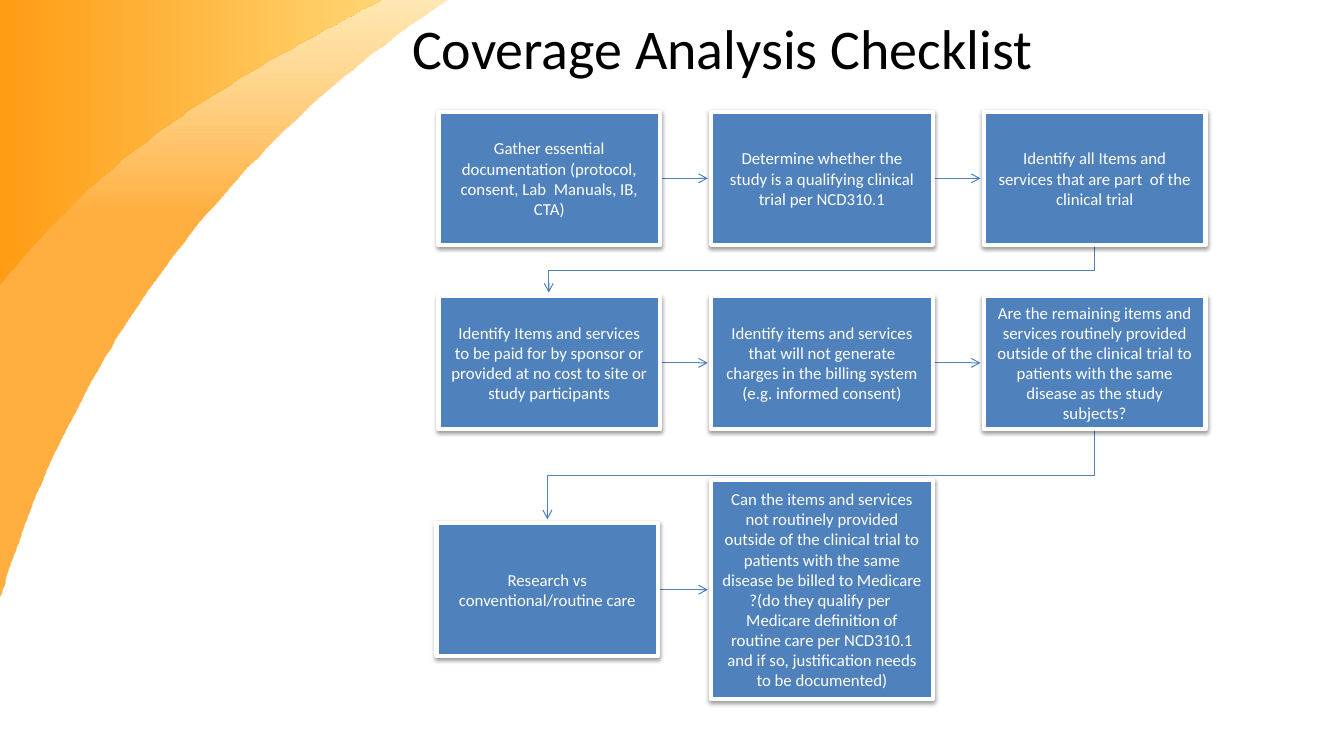
from lxml.etree import SubElement
from pptx import Presentation
from pptx.dml.color import RGBColor
from pptx.enum.shapes import MSO_CONNECTOR, MSO_SHAPE
from pptx.enum.text import MSO_ANCHOR, PP_ALIGN
from pptx.oxml.ns import qn
from pptx.util import Pt

BOX_W, BOX_H = 158.4, 95
COLUMNS = [313.2 + 194.8 * i for i in range(3)]
ROWS = [79.9, 211.7]
ARROW_GAP = 2.4

STEPS = [
    ["Gather essential documentation (protocol, consent, Lab  Manuals, IB, CTA)",
     "Determine whether the study is a qualifying clinical trial per NCD310.1",
     "Identify all Items and services that are part  of the clinical trial"],
    ["Identify Items and services to be paid for by sponsor or provided at no cost "
     "to site or study participants",
     "Identify items and services that will not generate charges in the billing "
     "system (e.g. informed consent)",
     "Are the remaining items and services routinely provided outside of the "
     "clinical trial to patients with the same disease as the study subjects?"],
]
CARE_TYPE = "Research vs conventional/routine care"
BILLING = ("Can the items and services not routinely provided outside of the clinical "
           "trial to patients with the same disease be billed to Medicare ?(do they "
           "qualify per  Medicare definition of routine care per NCD310.1 and if so, "
           "justification needs to be documented)")


def color(hex_text):
    return RGBColor.from_string(hex_text)


def bezier(start, control1, control2, end, steps=60):
    """Return points along a cubic curve, without its start."""
    points = []
    for i in range(1, steps + 1):
        t = i / steps
        u = 1 - t
        weights = (u ** 3, 3 * u * u * t, 3 * u * t * t, t ** 3)
        points.append(tuple(sum(w * p[axis] for w, p in
                                zip(weights, (start, control1, control2, end)))
                            for axis in (0, 1)))
    return points


class FlowSlide:
    font = "Calibri"
    blue, white, black = "4F81BD", "FFFFFF", "000000"

    def __init__(self, slide):
        self.shapes = slide.shapes

    def style_text(self, frame, text, size, hex_text, align, anchor):
        frame.word_wrap = True
        frame.vertical_anchor = anchor
        frame.text = text
        paragraph = frame.paragraphs[0]
        paragraph.alignment = align
        font = paragraph.runs[0].font
        font.name, font.size = self.font, Pt(size)
        font.color.rgb = color(hex_text)

    def title(self, text, left, top, width, height):
        frame = self.shapes.add_textbox(Pt(left), Pt(top), Pt(width), Pt(height)).text_frame
        self.style_text(frame, text, 40, self.black, PP_ALIGN.LEFT, MSO_ANCHOR.BOTTOM)

    def outline(self, points, close):
        builder = self.shapes.build_freeform(*points[0], scale=Pt(1))
        builder.add_line_segments(points[1:], close=close)
        shape = builder.convert_to_shape()
        shape.shadow.inherit = False
        return shape

    def swoosh(self, curve, angle, stops):
        """Fill the corner above a curve; stops hold position, colour and opacity."""
        start = curve[0]
        shape = self.outline([(0, 0), start, *bezier(*curve)], True)
        shape.line.fill.background()
        shape.fill.gradient()
        shape.fill.gradient_angle = angle
        for stop, (position, hex_text, _) in zip(shape.fill.gradient_stops, stops):
            stop.position = position
            stop.color.rgb = color(hex_text)
        tints = shape.element.spPr.iter(qn("a:srgbClr"))
        for tint, (_, _, opacity) in zip(tints, stops):
            SubElement(tint, qn("a:alpha"), val=str(opacity * 1000))

    def step(self, text, left, top, height=BOX_H):
        box = self.shapes.add_shape(MSO_SHAPE.RECTANGLE, Pt(left), Pt(top),
                                    Pt(BOX_W), Pt(height))
        box.fill.solid()
        box.fill.fore_color.rgb = color(self.blue)
        box.line.color.rgb = color(self.white)
        box.line.width = Pt(3)
        self.drop_shadow(box)
        frame = box.text_frame
        frame.margin_left = frame.margin_right = Pt(8)
        frame.margin_top = frame.margin_bottom = Pt(8)
        self.style_text(frame, text, 12, self.white, PP_ALIGN.CENTER, MSO_ANCHOR.MIDDLE)

    def drop_shadow(self, shape):
        shape.shadow.inherit = False
        effects = shape.element.spPr.find(qn("a:effectLst"))
        shadow = SubElement(effects, qn("a:outerShdw"), blurRad=str(Pt(3.1)),
                            dist=str(Pt(1.6)), dir="5400000", rotWithShape="0")
        tint = SubElement(shadow, qn("a:srgbClr"), val=self.black)
        SubElement(tint, qn("a:alpha"), val="38000")

    def style_arrow(self, shape):
        shape.line.color.rgb = color(self.blue)
        shape.line.width = Pt(0.75)
        SubElement(shape.line._get_or_add_ln(), qn("a:tailEnd"), type="arrow")

    def arrow(self, x1, x2, y):
        line = self.shapes.add_connector(MSO_CONNECTOR.STRAIGHT, Pt(x1), Pt(y), Pt(x2), Pt(y))
        self.style_arrow(line)
        SubElement(line.element.spPr, qn("a:effectLst"))

    def return_arrow(self, start, end, turn_y):
        """Lead down, back to the left and down to the next row."""
        bend = self.outline([start, (start[0], turn_y), (end[0], turn_y), end], False)
        bend.fill.background()
        self.style_arrow(bend)


def main():
    deck = Presentation()
    deck.slide_width, deck.slide_height = Pt(960), Pt(540)
    flow = FlowSlide(deck.slides.add_slide(deck.slide_layouts[6]))

    flow.swoosh([(320, 0), (160.6, 103.7), (49.7, 258.5), (0, 426.2)], 90,
                [(0.64, "FF9C14", 81), (1, "FFCD5F", 47)])
    flow.swoosh([(272.2, 0), (131.8, 72.7), (64.8, 121.7), (0, 203.8)], 0,
                [(0, "FF9C14", 100), (1, "FFD572", 100)])
    flow.title("Coverage Analysis Checklist", 287.3, 21.6, 644.4, 39.6)

    care_left, care_top = 311.8, 373.7
    row_ends = [(COLUMNS[0] + BOX_W / 2, ROWS[1], 193),
                (care_left + BOX_W / 2, care_top, 339.8)]
    for top, texts, (end_x, next_top, turn_y) in zip(ROWS, STEPS, row_ends):
        for left, next_left in zip(COLUMNS, COLUMNS[1:]):
            flow.arrow(left + BOX_W, next_left - ARROW_GAP, top + BOX_H / 2)
        flow.return_arrow((COLUMNS[2] + BOX_W / 2, top + BOX_H),
                          (end_x, next_top - ARROW_GAP), turn_y)
        for left, text in zip(COLUMNS, texts):
            flow.step(text, left, top)

    flow.arrow(care_left + BOX_W, COLUMNS[1] - ARROW_GAP, care_top + BOX_H / 2)
    flow.step(CARE_TYPE, care_left, care_top)
    flow.step(BILLING, COLUMNS[1], 342.9, 156.4)
    deck.save("out.pptx")


if __name__ == "__main__":
    main()
